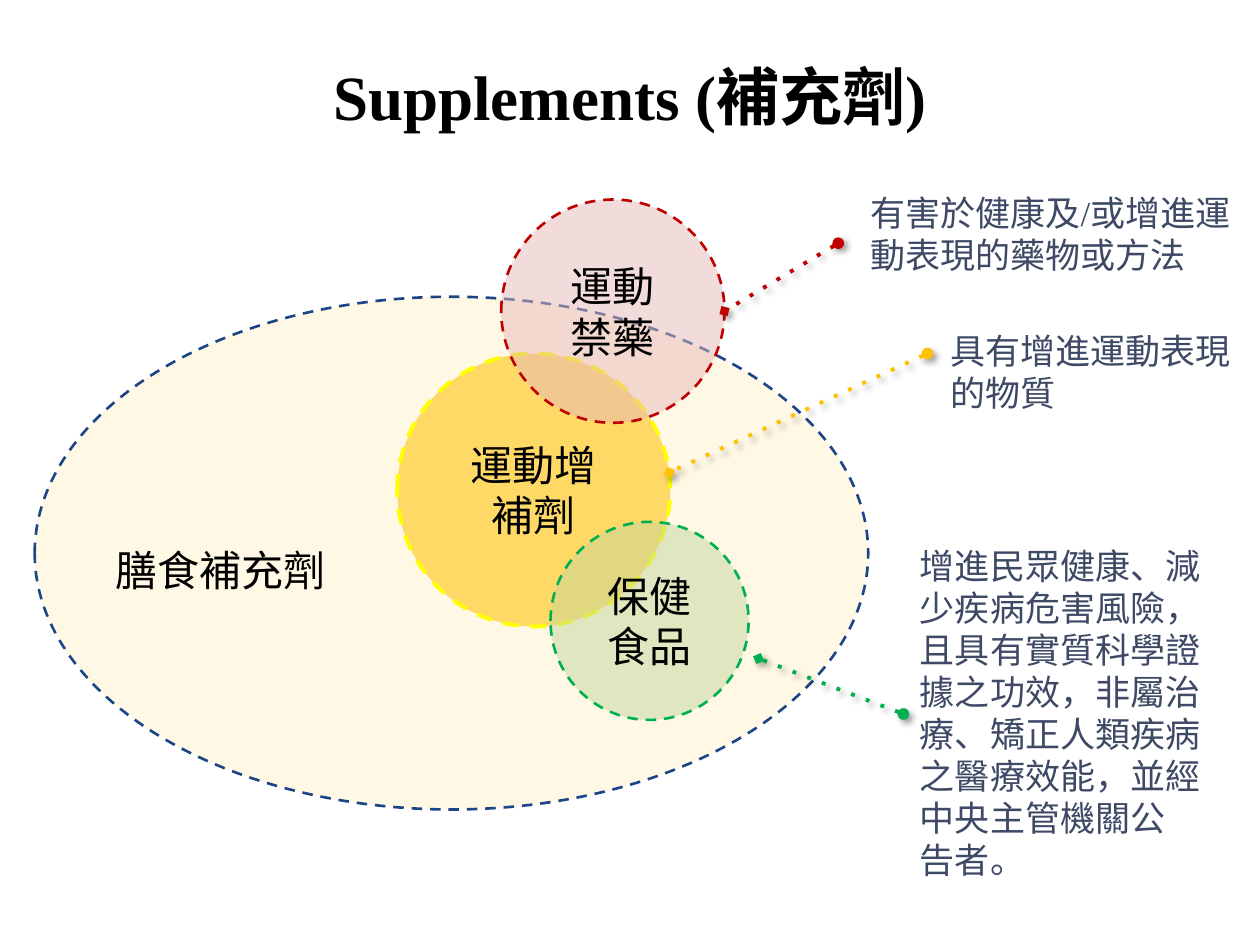
from lxml import etree
from pptx import Presentation
from pptx.dml.color import RGBColor
from pptx.enum.dml import MSO_LINE
from pptx.enum.shapes import MSO_CONNECTOR, MSO_SHAPE
from pptx.enum.text import MSO_ANCHOR, MSO_AUTO_SIZE, PP_ALIGN
from pptx.oxml.ns import qn
from pptx.util import Pt

OVAL = MSO_SHAPE.OVAL
STRAIGHT = MSO_CONNECTOR.STRAIGHT
DASH = MSO_LINE.DASH
CENTER, LEFT = PP_ALIGN.CENTER, PP_ALIGN.LEFT
MIDDLE, TOP = MSO_ANCHOR.MIDDLE, MSO_ANCHOR.TOP
GROW, FIXED = MSO_AUTO_SIZE.SHAPE_TO_FIT_TEXT, MSO_AUTO_SIZE.NONE

COLORS = {
    "black": "000000", "slate": "3D4965", "navy": "1C4587", "cream": "FFF2CC",
    "gold": "FFD966", "yellow": "FFFF00", "amber": "FFC000",
    "sage": "C3D69B", "green": "00B050", "rose": "E6B9B8", "red": "C00000",
}


def rgb(name):
    return RGBColor.from_string(COLORS[name])


def add_xml(parent, tag, **attrs):
    return etree.SubElement(parent, qn(tag), attrs)


class SlideBuilder:
    font = "Times New Roman"
    label_size = 24
    note_size = 20
    inset = 9.36

    def __init__(self, slide):
        self.s = slide

    def fill_text(self, tf, text, size, color="black", align=CENTER, bold=False):
        tf.word_wrap = True
        p = tf.paragraphs[0]
        p.text = text
        p.alignment = align
        p.font.name = self.font
        p.font.size = Pt(size)
        p.font.bold = bold
        p.font.color.rgb = rgb(color)

    def textbox(self, box, text, size, anchor=TOP, auto_size=GROW, **style):
        tf = self.s.shapes.add_textbox(*map(Pt, box)).text_frame
        self.fill_text(tf, text, size, **style)
        tf.vertical_anchor = anchor
        tf.auto_size = auto_size

    def note(self, box, text):
        self.textbox(box, text, self.note_size, color="slate", align=LEFT)

    def ellipse(self, box, fill, line, text="", opacity=50, width=1.5):
        sp = self.s.shapes.add_shape(OVAL, *map(Pt, box))
        sp.shadow.inherit = False
        sp.fill.solid()
        sp.fill.fore_color.rgb = rgb(fill)
        if opacity < 100:
            color = sp._element.spPr.find(qn("a:solidFill"))[0]
            add_xml(color, "a:alpha", val=str(opacity * 1000))
        sp.line.color.rgb = rgb(line)
        sp.line.width = Pt(width)
        sp.line.dash_style = DASH
        if text:
            tf = sp.text_frame
            tf.margin_left = tf.margin_right = Pt(self.inset)
            tf.margin_top = tf.margin_bottom = Pt(self.inset)
            tf.vertical_anchor = MIDDLE
            self.fill_text(tf, text, self.label_size)

    def circle(self, left, top, diameter, *args, **style):
        self.ellipse((left, top, diameter, diameter), *args, **style)

    def leader(self, note_end, circle_end, color):
        """Dotted line with a dot at the note, a diamond at the circle and a soft shadow."""
        c = self.s.shapes.add_connector(STRAIGHT, *map(Pt, note_end + circle_end))
        c.line.color.rgb = rgb(color)
        c.line.width = Pt(2.25)
        ln = c._element.spPr.find(qn("a:ln"))
        add_xml(ln, "a:prstDash", val="dot")
        add_xml(ln, "a:headEnd", type="oval")
        add_xml(ln, "a:tailEnd", type="diamond")
        effects = add_xml(c._element.spPr, "a:effectLst")
        shadow = add_xml(effects, "a:outerShdw", blurRad=str(Pt(4)), dist=str(Pt(3)),
                         dir=str(45 * 60000), algn="tl", rotWithShape="0")
        shade = add_xml(shadow, "a:srgbClr", val=COLORS["black"])
        add_xml(shade, "a:alpha", val="40000")


def main():
    prs = Presentation()
    prs.slide_width, prs.slide_height = Pt(720), Pt(540)
    b = SlideBuilder(prs.slides.add_slide(prs.slide_layouts[6]))

    b.ellipse((19.8, 169.6, 476.3, 293), "cream", "navy")
    b.circle(227, 202, 156, "gold", "yellow", "運動增補劑", opacity=100, width=2.25)
    b.circle(314.6, 298.2, 113.2, "sage", "green", "保健食品")
    b.textbox((52, 307.4, 147.6, 36), "膳食補充劑", b.label_size)

    b.leader((530, 202), (382.5, 270), "amber")
    b.note((518.6, 307.4, 176, 201),
           "增進民眾健康、減少疾病危害風險，且具有實質科學證據之功效，"
           "非屬治療、矯正人類疾病之醫療效能，並經中央主管機關公 告者。")
    b.leader((516.3, 408), (433.5, 376.3), "green")
    b.note((535.8, 185, 176, 55.7), "具有增進運動表現的物質")

    b.circle(286.4, 114, 127.6, "rose", "red", "運動禁藥")
    b.leader((479, 139), (414, 177.8), "red")
    b.note((490.2, 105.8, 221, 55.7), "有害於健康及/或增進運動表現的藥物或方法")

    b.textbox((36, 9.4, 648, 90), "Supplements (補充劑)", 36,
              anchor=MIDDLE, auto_size=FIXED, bold=True)

    prs.save("out.pptx")


if __name__ == "__main__":
    main()
